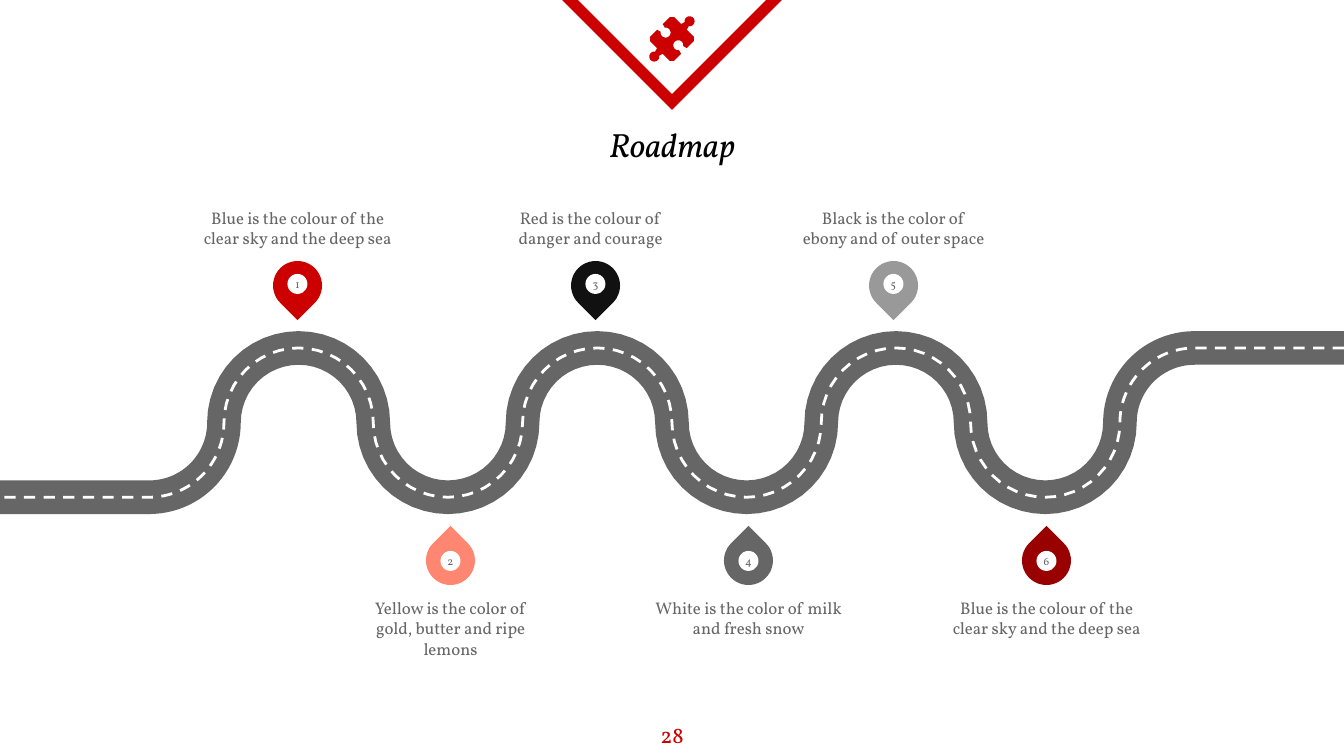
"""Build the roadmap slide: a winding road with six numbered pins."""
from math import cos, pi, sin

from lxml.etree import SubElement
from pptx import Presentation
from pptx.dml.color import RGBColor
from pptx.enum.dml import MSO_LINE_DASH_STYLE as Dash
from pptx.enum.shapes import MSO_SHAPE as Form
from pptx.enum.text import MSO_ANCHOR as Anchor, PP_ALIGN as Align
from pptx.oxml.ns import qn
from pptx.util import Pt

RED = RGBColor(0xCC, 0x00, 0x00)
DARK = RGBColor(0x99, 0x00, 0x00)
CORAL = RGBColor(0xFF, 0x86, 0x71)
BLACK = RGBColor(0x00, 0x00, 0x00)
INK = RGBColor(0x11, 0x11, 0x11)
GRAY = RGBColor(0x66, 0x66, 0x66)
SILVER = RGBColor(0x99, 0x99, 0x99)
WHITE = RGBColor(0xFF, 0xFF, 0xFF)

TITLE = "Roadmap"
PAGE = "28"
STOPS = [
    {"text": "Blue is the colour of the clear sky and the deep sea", "tint": RED, "nudge": 0},
    {"text": "Yellow is the color of gold, butter and ripe lemons", "tint": CORAL, "nudge": 0},
    {"text": "Red is the colour of danger and courage", "tint": INK, "nudge": -5},
    {"text": "White is the color of milk and fresh snow", "tint": GRAY, "nudge": 0},
    {"text": "Black is the color of ebony and of outer space", "tint": SILVER, "nudge": 0},
    {"text": "Blue is the colour of the clear sky and the deep sea", "tint": DARK, "nudge": 0},
]
ABOVE = {"left": 273, "pin": 261, "dot": 274, "text": 170, "turn": 135, "anchor": Anchor.BOTTOM}
BELOW = {"left": 426, "pin": 536, "dot": 551, "text": 598, "turn": 315, "anchor": Anchor.TOP}
LANES = [
    {"line": GRAY, "width": 18, "dash": None},
    {"line": WHITE, "width": 1.5, "dash": Dash.DASH},
]

SCALE = 914400 / 134.4
WIDE, HIGH = 1344, 756
PIN, DOT, STEP = 49, 20, 298
LABEL = {"wide": 190, "high": 78}
ROAD = {"top": 348, "bend": WIDE / 18, "last": 16}
PIECE = {"hub": 672 + 39j, "reach": 24, "cut": 3, "neck": 4, "stem": 8, "bulb": 5}


def px(*vals):
    return [round(val * SCALE) for val in vals]


def paint(shape, fill=None, line=None, width=0, dash=None):
    shape.shadow.inherit = False
    for part, tint in ((shape.fill, fill), (shape.line.fill, line)):
        if tint is None:
            part.background()
        else:
            part.solid()
            part.fore_color.rgb = tint
    if line is not None:
        shape.line.width = Pt(width)
        shape.line.dash_style = dash
        SubElement(shape.line._get_or_add_ln(), qn("a:miter"), lim="800000")


def write(shape, text, size, tint, pad=0, anchor=Anchor.TOP, italic=False):
    frame = shape.text_frame
    para = frame.paragraphs[0]
    run = para.add_run()
    run.text = text
    run.font.color.rgb = tint
    para.alignment = Align.CENTER
    sides = {f"margin_{side}": px(pad)[0] for side in ("left", "right", "top", "bottom")}
    looks = [
        (frame, {"word_wrap": True, "vertical_anchor": anchor, **sides}),
        (run.font, {"name": "Vollkorn", "size": Pt(size), "italic": italic}),
    ]
    for item, vals in looks:
        for name, val in vals.items():
            setattr(item, name, val)


def trace(shapes, dots, close):
    spots = [px(dot.real, dot.imag) for dot in dots]
    pen = shapes.build_freeform(*spots[0])
    pen.add_line_segments(spots[1:], close=close)
    return pen.convert_to_shape()


def sweep(hub, size, start, end, steps=24):
    turns = [start + (end - start) * step / steps for step in range(steps + 1)]
    return [hub + size * complex(cos(turn), sin(turn)) for turn in turns]


def route():
    top, bend, last = ROAD["top"], ROAD["bend"], ROAD["last"]
    dots = [complex(WIDE, top)]
    for slot in range(last, 0, -2):
        crest = slot % 4 == 0
        start = pi / 2 if slot == last else 0
        end = pi / 2 if slot == 2 else pi
        side = -1 if crest else 1
        dots += sweep(complex(bend * slot, top + bend), bend, side * start, side * end)
    return dots + [complex(0, top + 2 * bend)]


def puzzle():
    hub, reach, cut, neck, stem, bulb = PIECE.values()
    dots = []
    for side in range(4):
        head, tail = reach * 1j ** side, reach * 1j ** (side + 1)
        along = (tail - head) / abs(tail - head)
        out = -1j * along
        mid = (head + tail) / 2
        sign = 1 if side % 2 else -1
        knob = [
            mid + bulb * along * dot.real + sign * out * (stem + bulb * dot.imag)
            for dot in sweep(0, 1, pi * 1.3, -pi * 0.3)
        ]
        edge = [head + cut * along, mid - neck * along, *knob, mid + neck * along, tail - cut * along]
        dots += [hub + dot for dot in edge]
    return dots


def mark(shapes, rank, stop):
    row = BELOW if rank % 2 else ABOVE
    left = row["left"] + STEP * (rank // 2)
    mid = left + PIN / 2

    pin = shapes.add_shape(Form.TEAR, *px(left, row["pin"], PIN, PIN))
    pin.rotation = row["turn"]
    paint(pin, stop["tint"])

    dot = shapes.add_shape(Form.OVAL, *px(mid - DOT / 2, row["dot"], DOT, DOT))
    paint(dot, WHITE)
    write(dot, str(rank + 1), 6, GRAY, anchor=Anchor.MIDDLE)

    start = mid - LABEL["wide"] / 2 + stop["nudge"]
    box = shapes.add_textbox(*px(start, row["text"], *LABEL.values()))
    write(box, stop["text"], 9, GRAY, anchor=row["anchor"])


def main():
    deck = Presentation()
    deck.slide_width, deck.slide_height = px(WIDE, HIGH)
    shapes = deck.slides.add_slide(deck.slide_layouts[6]).shapes

    flag = shapes.add_shape(Form.ISOSCELES_TRIANGLE, *px(562, -8, 220, 110))
    flag.rotation = 180
    paint(flag, line=RED, width=6)
    write(shapes.add_textbox(*px(152, 111, 1040, 79)), TITLE, 18, BLACK, pad=13, italic=True)
    write(shapes.add_textbox(*px(0, 708, WIDE, 48)), PAGE, 12, RED, pad=13)

    for lane in LANES:
        paint(trace(shapes, route(), False), **lane)
    for rank, stop in enumerate(STOPS):
        mark(shapes, rank, stop)
    paint(trace(shapes, puzzle(), True), RED)
    deck.save("out.pptx")


if __name__ == "__main__":
    main()
